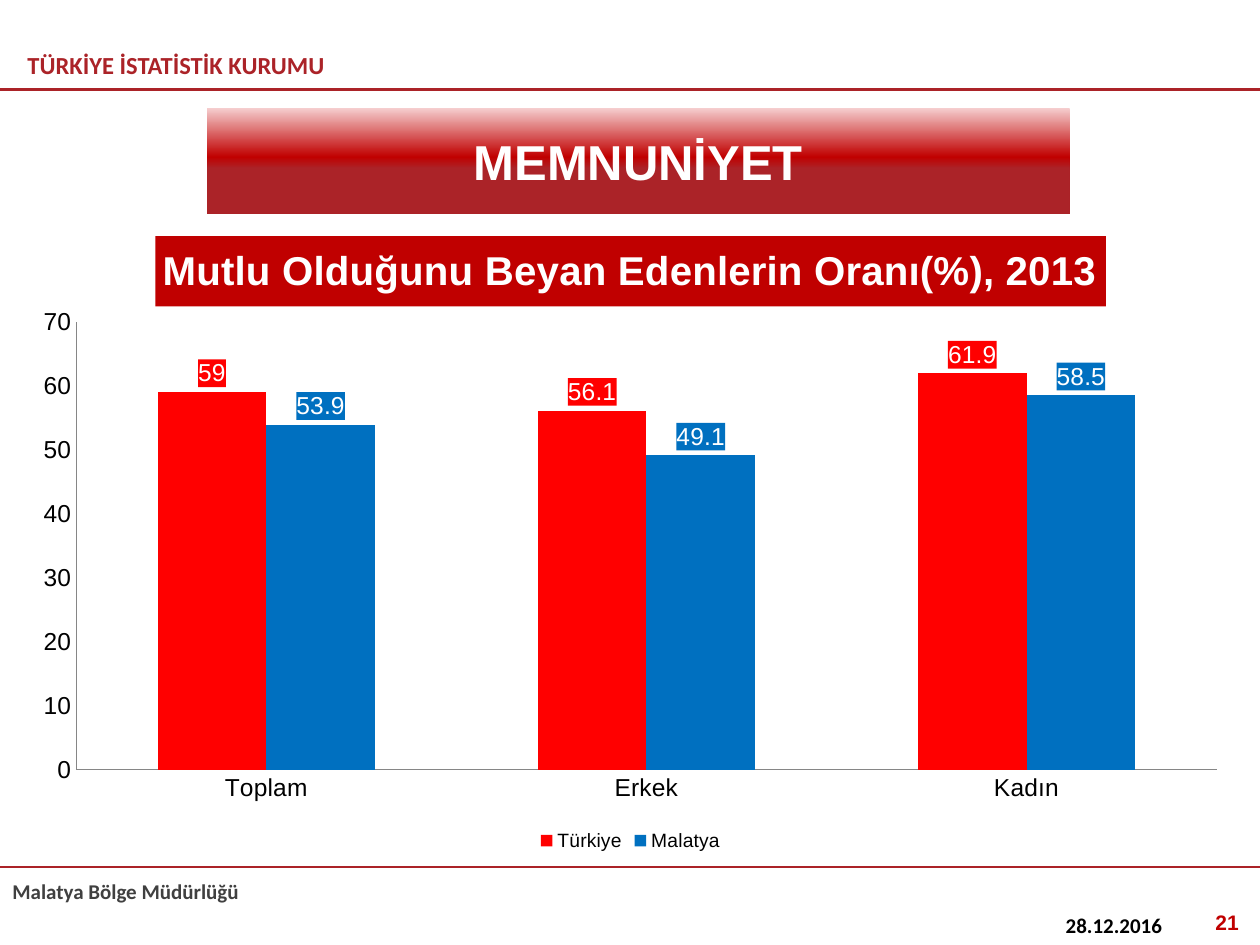
from lxml.etree import SubElement
from pptx import Presentation
from pptx.chart.data import CategoryChartData
from pptx.dml.color import RGBColor
from pptx.enum.chart import XL_CHART_TYPE as ChartType, XL_LABEL_POSITION as LabelPosition
from pptx.enum.chart import XL_LEGEND_POSITION as LegendPosition, XL_TICK_MARK as TickMark
from pptx.enum.shapes import MSO_CONNECTOR as Connector, MSO_SHAPE as Shape
from pptx.enum.text import MSO_ANCHOR as Anchor, PP_ALIGN as Align
from pptx.oxml import parse_xml
from pptx.oxml.ns import nsdecls, qn
from pptx.util import Inches, Pt

WIDTH, HEIGHT = 10, 7.5
CRIMSON, DARK_RED, WHITE, BLACK = "AB2328", "C00000", "FFFFFF", "000000"
BANNER_STOPS = [(0, "F5CDCE"), (46, DARK_RED), (57, CRIMSON), (100, CRIMSON)]
CATEGORIES = ["Toplam", "Erkek", "Kadın"]
SERIES = [("Türkiye", [59, 56.1, 61.9], "FF0000"),
          ("Malatya", [53.9, 49.1, 58.5], "0070C0")]
PLOT_AREA = {"x": 0.046, "y": 0.164, "w": 0.934, "h": 0.7}  # shares of the chart


def color(value):
    return RGBColor.from_string(value)


def set_font(font, size, value=BLACK, name="Arial", bold=False):
    font.size, font.name, font.bold = Pt(size), name, bold
    font.color.rgb = color(value)


def write(frame, text, align=Align.LEFT, anchor=Anchor.TOP, **font):
    frame.word_wrap = True
    frame.vertical_anchor = anchor
    paragraph = frame.paragraphs[0]
    paragraph.alignment = align
    run = paragraph.add_run()
    run.text = text
    set_font(run.font, **font)


def add_text(slide, text, box, **style):
    shape = slide.shapes.add_textbox(*map(Inches, box))
    write(shape.text_frame, text, **style)


def add_rule(slide, y):
    line = slide.shapes.add_connector(
        Connector.STRAIGHT, 0, Inches(y), Inches(WIDTH), Inches(y))
    line.line.color.rgb = color(CRIMSON)
    line.line.width = Pt(1.5)
    SubElement(line._element.spPr, qn("a:effectLst"))


def add_banner(slide, text, box):
    banner = slide.shapes.add_shape(Shape.RECTANGLE, *map(Inches, box))
    banner.shadow.inherit = False
    banner.line.fill.background()
    banner.fill.gradient()
    banner.fill.gradient_angle = 270
    stops = banner._element.spPr.find(qn("a:gradFill")).find(qn("a:gsLst"))
    for stop in list(stops):
        stops.remove(stop)
    for share, value in BANNER_STOPS:
        stop = SubElement(stops, qn("a:gs"), pos=str(share * 1000))
        SubElement(stop, qn("a:srgbClr"), val=value)
    write(banner.text_frame, text, align=Align.CENTER, anchor=Anchor.MIDDLE,
          size=28, value=WHITE, bold=True)


def add_title(chart, text):
    chart.has_title = True
    title = chart.chart_title
    title.format.fill.solid()
    title.format.fill.fore_color.rgb = color(DARK_RED)
    title.text_frame.word_wrap = False
    paragraph = title.text_frame.paragraphs[0]
    run = paragraph.add_run()
    run.text = text
    # Just small enough to stay on one line above the plot
    for font in (paragraph.font, run.font):
        set_font(font, 23, WHITE, bold=True)


def place_plot(chart):
    plot_area = chart._chartSpace.chart.plotArea
    for layout in plot_area.findall(qn("c:layout")):
        plot_area.remove(layout)
    modes = "".join(f'<c:{axis}Mode val="edge"/>' for axis in "xy")
    sizes = "".join(f'<c:{key} val="{share}"/>' for key, share in PLOT_AREA.items())
    plot_area.insert(0, parse_xml(
        f'<c:layout {nsdecls("c")}><c:manualLayout><c:layoutTarget val="inner"/>'
        f'{modes}{sizes}</c:manualLayout></c:layout>'))


def style_axis(axis):
    axis.has_major_gridlines = False
    axis.major_tick_mark = axis.minor_tick_mark = TickMark.NONE
    axis.format.line.color.rgb = color("868686")
    set_font(axis.tick_labels.font, 14)


def style_series(series, value):
    series.format.fill.solid()
    series.format.fill.fore_color.rgb = color(value)
    labels = series.data_labels
    labels.show_value = True
    labels.position = LabelPosition.OUTSIDE_END
    set_font(labels.font, 14, WHITE)
    # Label background in the colour of the bar
    labels._element.find(qn("c:txPr")).addprevious(parse_xml(
        f'<c:spPr {nsdecls("c", "a")}><a:solidFill><a:srgbClr val="{value}"/>'
        '</a:solidFill></c:spPr>'))


def add_chart(slide, title, box):
    data = CategoryChartData()
    data.categories = CATEGORIES
    for name, values, _ in SERIES:
        data.add_series(name, values)
    chart = slide.shapes.add_chart(
        ChartType.COLUMN_CLUSTERED, *map(Inches, box), data).chart
    set_font(chart.font, 10)
    add_title(chart, title)

    # Legend
    chart.has_legend = True
    chart.legend.position = LegendPosition.BOTTOM
    chart.legend.include_in_layout = False
    set_font(chart.legend.font, 11)

    # Axes and columns
    place_plot(chart)
    for axis in (chart.category_axis, chart.value_axis):
        style_axis(axis)
    chart.value_axis.minimum_scale = 0
    chart.value_axis.maximum_scale = 70
    chart.value_axis.major_unit = 10
    plot = chart.plots[0]
    plot.vary_by_categories = False
    plot.gap_width, plot.overlap = 150, 0
    for series, (_, _, value) in zip(plot.series, SERIES):
        style_series(series, value)


def main():
    presentation = Presentation()
    presentation.slide_width = Inches(WIDTH)
    presentation.slide_height = Inches(HEIGHT)
    slide = presentation.slides.add_slide(presentation.slide_layouts[6])

    # Header and footer
    add_text(slide, "TÜRKİYE İSTATİSTİK KURUMU", (0.12, 0.32, 3.54, 0.39),
             anchor=Anchor.MIDDLE, size=14, value=CRIMSON, name="Calibri", bold=True)
    add_text(slide, "Malatya Bölge Müdürlüğü", (0, 6.92, 4.29, 0.52),
             size=12, value="404040", name="Calibri", bold=True)
    for y in (0.71, 6.88):
        add_rule(slide, y)
    add_text(slide, "28.12.2016", (8.36, 7.19, 2.33, 0.52),
             size=12, name="Calibri", bold=True)
    add_text(slide, "21", (7.6, 7.17, 2.33, 0.52), align=Align.RIGHT,
             size=12, value=DARK_RED, bold=True)

    # Content
    add_banner(slide, "MEMNUNİYET", (1.64, 0.86, 6.85, 0.84))
    add_chart(slide, "Mutlu Olduğunu Beyan Edenlerin Oranı(%), 2013",
              (0.16, 1.72, 9.69, 5.08))

    presentation.save("out.pptx")


if __name__ == "__main__":
    main()
